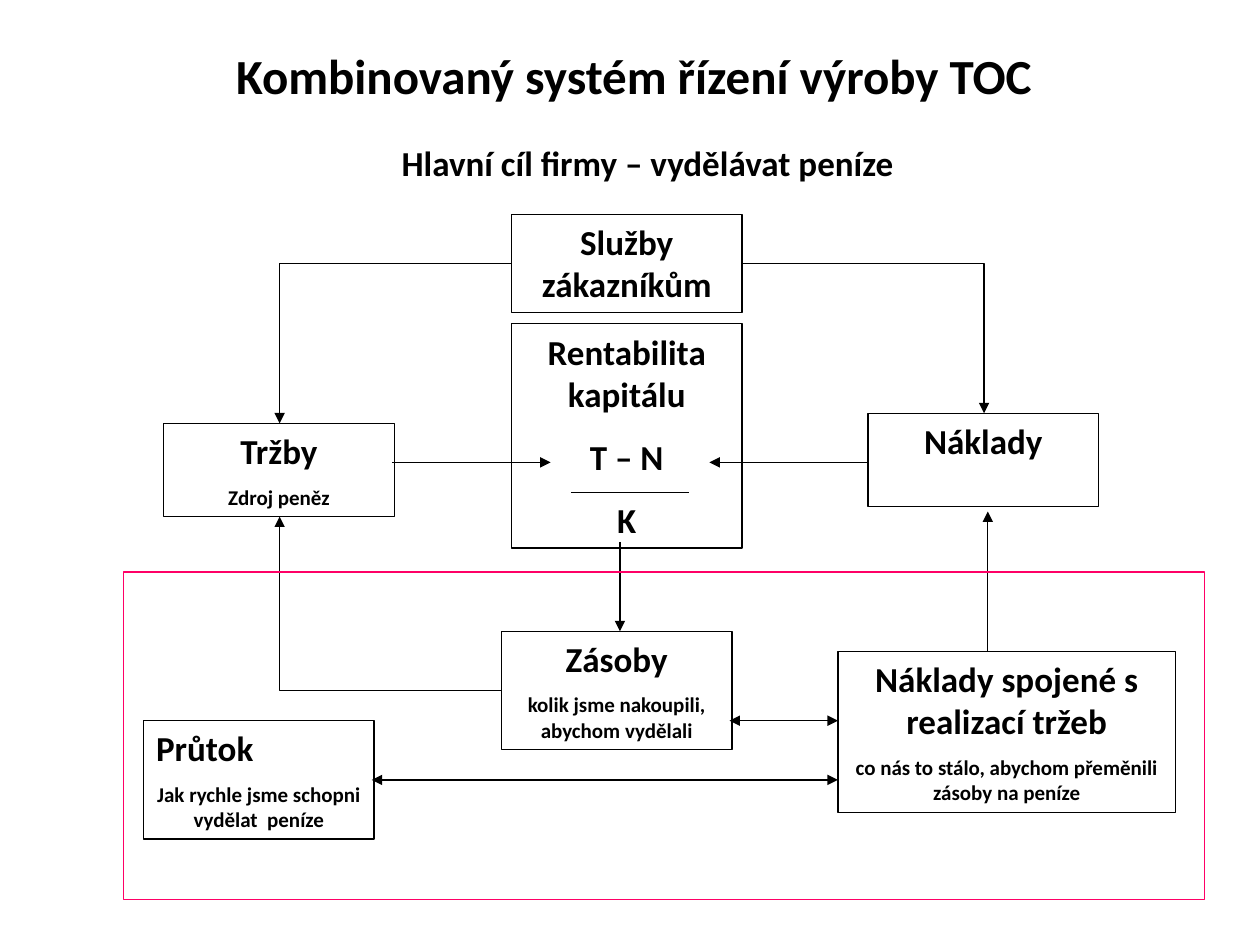
from dataclasses import dataclass

from lxml import etree
from pptx import Presentation
from pptx import util as u
from pptx.dml.color import RGBColor
from pptx.enum import shapes, text
from pptx.oxml.ns import qn

COLUMNS, ROWS = 100, 75
WIDTH, HEIGHT = u.Inches(10), u.Inches(7.5)


@dataclass(frozen=True)
class Theme:
    font: str = "Calibri"
    ink: RGBColor = RGBColor(0, 0, 0)
    paper: RGBColor = RGBColor(255, 255, 255)
    accent: RGBColor = RGBColor(0xFF, 0x00, 0x66)
    title: int = 28
    heading: int = 20
    note: int = 12
    line: float = 0.75
    gap: float = 0.6  # space before a paragraph, as a share of its type size


@dataclass(frozen=True)
class Box:
    left: float
    top: float
    width: float
    height: float
    headings: tuple[str, ...]
    note: str = ""
    heading_align: text.PP_ALIGN = text.PP_ALIGN.CENTER


@dataclass(frozen=True)
class Link:
    start: tuple[float, float]
    end: tuple[float, float]
    arrow_start: bool = False
    arrow_end: bool = False
    bent: bool = False


THEME = Theme()
BOX_WIDTH = 18.3

BOXES = [
    Box(40.6, 17, BOX_WIDTH, 7.8, ("Služby zákazníkům",)),
    Box(40.6, 25.7, BOX_WIDTH, 17.8, ("Rentabilita kapitálu", "T – N", "K")),
    Box(13, 33.6, BOX_WIDTH, 7.4, ("Tržby",), "Zdroj peněz"),
    Box(68.9, 32.8, BOX_WIDTH, 7.4, ("Náklady",)),
    Box(39.8, 50.1, BOX_WIDTH, 9.4, ("Zásoby",),
        "kolik jsme nakoupili, abychom vydělali"),
    Box(11.4, 57.2, BOX_WIDTH, 9.4, ("Průtok",),
        "Jak rychle jsme schopni vydělat  peníze", text.PP_ALIGN.LEFT),
    Box(66.5, 51.7, 26.8, 12.8, ("Náklady spojené s realizací tržeb",),
        "co nás to stálo, abychom přeměnili zásoby na peníze"),
]

LINKS = [
    Link((45.3, 39.1), (54.7, 39.1)),
    Link((31.1, 36.7), (43.7, 36.7), arrow_end=True),
    Link((68.9, 36.7), (56.3, 36.7), arrow_end=True),
    Link((49.2, 43), (49.2, 50.1), arrow_end=True),
    Link((57.9, 57.2), (66.5, 57.2), arrow_start=True, arrow_end=True),
    Link((29.5, 61.9), (66.5, 61.9), arrow_start=True, arrow_end=True),
    Link((78.4, 51.7), (78.4, 40.6), arrow_end=True),
    Link((40.6, 20.9), (22.2, 33.6), arrow_end=True, bent=True),
    Link((58.9, 20.9), (78.1, 32.8), arrow_end=True, bent=True),
    Link((39.8, 54.8), (22.2, 41), arrow_end=True, bent=True),
]


def across(columns: float) -> int:
    return round(WIDTH * columns / COLUMNS)


def down(rows: float) -> int:
    return round(HEIGHT * rows / ROWS)


def place(left: float, top: float, width: float, height: float) -> tuple[int, ...]:
    return across(left), down(top), across(width), down(height)


def write(shape, lines: list[tuple], first_gap: bool = False) -> None:
    """Fill a shape with (wording, size, alignment) paragraphs."""
    frame = shape.text_frame
    frame_format = {
        "word_wrap": True,
        "auto_size": text.MSO_AUTO_SIZE.NONE,
        "vertical_anchor": text.MSO_ANCHOR.TOP,
    }
    for name, value in frame_format.items():
        setattr(frame, name, value)
    for index, (wording, size, alignment) in enumerate(lines):
        paragraph = frame.add_paragraph() if index else frame.paragraphs[0]
        paragraph.alignment = alignment
        paragraph.space_before = u.Pt(THEME.gap * size if index else 0)
        run = paragraph.add_run()
        run.text = wording
        for name, value in {"name": THEME.font, "size": u.Pt(size), "bold": True}.items():
            setattr(run.font, name, value)
        run.font.color.rgb = THEME.ink


def add_rectangle(slide, area: tuple[int, ...], outline: RGBColor):
    shape = slide.shapes.add_shape(shapes.MSO_SHAPE.RECTANGLE, *area)
    shape.shadow.inherit = False
    shape.line.color.rgb = outline
    shape.line.width = u.Pt(THEME.line)
    return shape


def draw_box(slide, box: Box) -> None:
    area = place(box.left, box.top, box.width, box.height)
    shape = add_rectangle(slide, area, THEME.ink)
    shape.fill.solid()
    shape.fill.fore_color.rgb = THEME.paper
    lines = [(heading, THEME.heading, box.heading_align) for heading in box.headings]
    if box.note:
        lines.append((box.note, THEME.note, text.PP_ALIGN.CENTER))
    write(shape, lines)


def draw_link(slide, link: Link) -> None:
    kind = shapes.MSO_CONNECTOR.ELBOW if link.bent else shapes.MSO_CONNECTOR.STRAIGHT
    points = [scale(value) for point in (link.start, link.end)
              for scale, value in zip((across, down), point)]
    connector = slide.shapes.add_connector(kind, *points)
    connector.line.color.rgb = THEME.ink
    connector.line.width = u.Pt(THEME.line)
    properties = connector._element.spPr
    if link.bent:
        properties.find(qn("a:prstGeom")).set("prst", "bentConnector2")
    outline = properties.find(qn("a:ln"))
    for tag, wanted in (("a:headEnd", link.arrow_start), ("a:tailEnd", link.arrow_end)):
        if wanted:
            etree.SubElement(outline, qn(tag), type="triangle")
    etree.SubElement(properties, qn("a:effectLst"))


def main() -> None:
    presentation = Presentation()
    presentation.slide_width, presentation.slide_height = WIDTH, HEIGHT
    slide = presentation.slides.add_slide(presentation.slide_layouts[5])

    title = slide.shapes.title
    title_area = place(6.2, 3.1, 88.2, 5.7)
    for name, value in zip(("left", "top", "width", "height"), title_area):
        setattr(title, name, value)
    write(title, [("Kombinovaný systém řízení výroby TOC",
                   THEME.title, text.PP_ALIGN.CENTER)])

    goal = slide.shapes.add_textbox(*place(11.4, 10.7, 80, 4.3))
    write(goal, [("Hlavní cíl firmy – vydělávat peníze",
                  THEME.heading, text.PP_ALIGN.CENTER)])

    for box in BOXES:
        draw_box(slide, box)
    for link in LINKS:
        draw_link(slide, link)

    group_frame = add_rectangle(slide, place(9.8, 45.4, 85.8, 26), THEME.accent)
    group_frame.fill.background()

    presentation.save("out.pptx")


if __name__ == "__main__":
    main()
